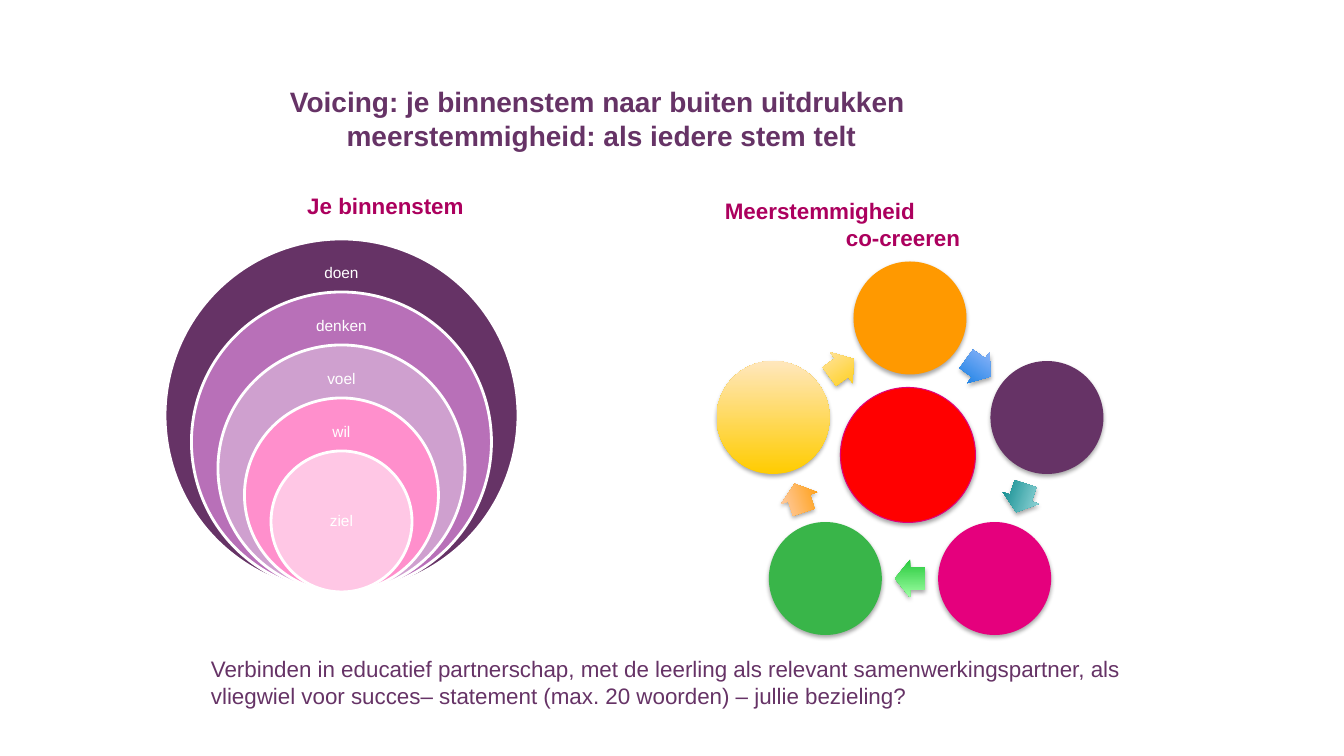
from math import cos, radians, sin

from lxml.etree import SubElement
from pptx import Presentation
from pptx.dml.color import RGBColor
from pptx.enum.shapes import MSO_SHAPE
from pptx.enum.text import MSO_ANCHOR, PP_ALIGN
from pptx.oxml.ns import qn
from pptx.util import Pt

SCALE = 914400 / 100.8
PURPLE, WINE, WHITE = "663366", "AC005E", "FFFFFF"
LEFT, MID, RIGHT = PP_ALIGN.LEFT, PP_ALIGN.CENTER, PP_ALIGN.RIGHT


def px(n):
    return round(n * SCALE)


def rgb(code):
    return RGBColor.from_string(code)


def write(slide, box, text, size=16, color=PURPLE, bold=False, aligns=(LEFT,),
          anchor=MSO_ANCHOR.TOP, spacing=None):
    """Place text in a box; each line of aligns formats one paragraph."""
    frame = slide.shapes.add_textbox(*map(px, box)).text_frame
    frame.word_wrap = True
    frame.vertical_anchor = anchor
    frame.text = text
    for par, align in zip(frame.paragraphs, aligns):
        par.alignment = align
        par.line_spacing = spacing
        font = par.font
        font.name, font.size, font.bold = "Arial", Pt(size), bold
        font.color.rgb = rgb(color)


def draw(slide, kind, center, size, fill, line=None, weight=1, turn=0):
    """Draw a shape around a center; fill is one color or (bottom, top)."""
    (x, y), (w, h) = center, size
    shape = slide.shapes.add_shape(kind, px(x - w / 2), px(y - h / 2), px(w), px(h))
    shape.shadow.inherit = False
    shape.rotation = turn
    if isinstance(fill, str):
        shape.fill.solid()
        shape.fill.fore_color.rgb = rgb(fill)
    else:
        shape.fill.gradient()
        shape.fill.gradient_angle = 90
        for stop, code, spot in zip(shape.fill.gradient_stops, fill, (0, 1)):
            stop.color.rgb = rgb(code)
            stop.position = spot
    if line:
        shape.line.color.rgb = rgb(line)
        shape.line.width = Pt(weight)
    else:
        shape.line.fill.background()
    return shape


def shade(shape):
    """Add a soft shadow below a shape."""
    effects = shape.element.spPr.find(qn("a:effectLst"))
    outer = SubElement(effects, qn("a:outerShdw"), blurRad="40000", dist="23000",
                       dir="5400000", rotWithShape="0")
    color = SubElement(outer, qn("a:srgbClr"), val="000000")
    SubElement(color, qn("a:alpha"), val="35000")


def onion(slide, x, y, size):
    """Nested circles that share their lowest point."""
    step, high = 53, 35
    rings = [("doen", PURPLE), ("denken", "B870B8"), ("voel", "CFA0CF"),
             ("wil", "FF8FCC"), ("ziel", "FFC7E5")]
    mid, base = x + size / 2, y + size
    for i, (name, fill) in enumerate(rings):
        wide = size - i * step
        draw(slide, MSO_SHAPE.OVAL, (mid, base - wide / 2), (wide, wide),
             fill, WHITE, 2)
        last = i == len(rings) - 1
        top = base - wide / 2 - high / 2 if last else base - wide + 17
        write(slide, (mid - 65, top, 130, high), name, size=11, color=WHITE,
              aligns=[MID], anchor=MSO_ANCHOR.MIDDLE, spacing=0.9)


def cycle(slide, x, y, reach):
    """Five circles around a core, with arrows between them."""
    gold = ("FFCC00", "FFE7BD")
    steps = [("FF9900", ("0076E0", "AEC3FF")), (PURPLE, ("008386", "A7E1E4")),
             ("E5007D", ("26C83B", "9EFFA4")), ("39B549", ("FF9900", "FFD4BD")),
             (gold, gold)]
    turn = 360 / len(steps)

    def spot(angle, far):
        return x + far * sin(radians(angle)), y - far * cos(radians(angle))

    for i, (fill, tint) in enumerate(steps):
        shade(draw(slide, MSO_SHAPE.OVAL, spot(i * turn, reach), (113, 113), fill))
        angle = (i + 0.5) * turn
        arrow = draw(slide, MSO_SHAPE.RIGHT_ARROW,
                     spot(angle, reach * cos(radians(turn / 2))), (30, 38),
                     tint, turn=angle)
        arrow.adjustments[0] = 0.6
        shade(arrow)
    shade(draw(slide, MSO_SHAPE.OVAL, (x - 2, y - 7), (135, 135),
               "FF0000", "E0007A", 0.75))


def heads(slide):
    """Title and the two column headings."""
    write(slide, (193, 83, 817, 71),
          "Voicing: je binnenstem naar buiten uitdrukken \v"
          "meerstemmigheid: als iedere stem telt",
          size=20, bold=True, aligns=[MID], anchor=MSO_ANCHOR.MIDDLE)
    write(slide, (217, 186, 337, 38), "Je binnenstem", color=WINE, bold=True,
          aligns=[MID], anchor=MSO_ANCHOR.BOTTOM)
    write(slide, (715, 184, 255, 72), "Meerstemmigheid\nco-creeren", color=WINE,
          bold=True, aligns=[LEFT, RIGHT], anchor=MSO_ANCHOR.BOTTOM)


def main():
    deck = Presentation()
    deck.slide_width, deck.slide_height = px(1344), px(756)
    slide = deck.slides.add_slide(deck.slide_layouts[6])
    heads(slide)
    cycle(slide, 910, 462, 144)
    onion(slide, 165, 239, 353)
    # Closing statement
    write(slide, (201, 650, 930, 65),
          "Verbinden in educatief partnerschap, met de leerling als relevant "
          "samenwerkingspartner, als vliegwiel voor succes– statement "
          "(max. 20 woorden) – jullie bezieling?")
    deck.save("out.pptx")


if __name__ == "__main__":
    main()
